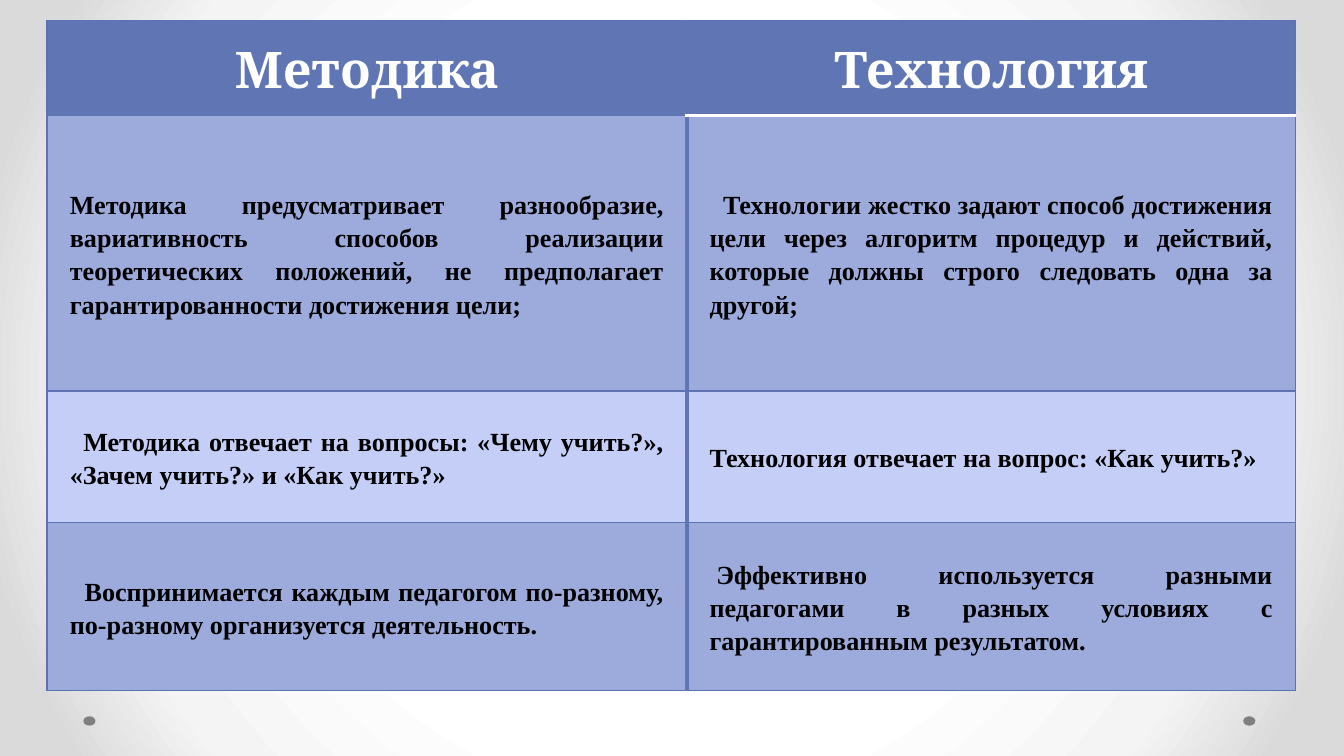
from lxml import etree
from pptx import Presentation
from pptx.dml.color import RGBColor
from pptx.enum.shapes import MSO_SHAPE
from pptx.enum.text import MSO_ANCHOR, PP_ALIGN
from pptx.oxml import parse_xml
from pptx.oxml.ns import nsdecls, qn
from pptx.util import Inches, Pt

OVAL = MSO_SHAPE.OVAL
MIDDLE = MSO_ANCHOR.MIDDLE
CENTER, JUSTIFY = PP_ALIGN.CENTER, PP_ALIGN.JUSTIFY

COLORS = {
    "header": "6076B4", "band": "9DAADC", "light": "C5CEF6",
    "border": "5C72B2", "white": "FFFFFF", "black": "000000", "dot": "808080",
}
BACKDROP_STOPS = [(50, "FFFFFF"), (76, "F4F4F4"), (92, "DADADA")]
SLIDE_WIDTH = 10
SLIDE_HEIGHT = SLIDE_WIDTH * 9 / 16
COLUMN_WIDTHS = [4.76, 4.53]
ROW_HEIGHTS = [0.71, 2.05, 0.98, 1.25]
ROW_FILLS = ["header", "band", "light", "band"]
HEADER_FONT = {"name": "Cambria", "size": Pt(27), "bold": True}
BODY_FONT = {"name": "Times New Roman", "size": Pt(14), "bold": True}
CELL_FORMAT = {
    "vertical_anchor": MIDDLE,
    "margin_left": Inches(0.17), "margin_right": Inches(0.17),
    "margin_top": Inches(0.09), "margin_bottom": Inches(0.09),
}

# Each entry is the wording and its first-line indent in inches.
COMPARISON = [
    [("Методика", 0), ("Технология", 0)],
    [("Методика предусматривает разнообразие, вариативность способов реализации "
      "теоретических положений, не предполагает гарантированности достижения цели;", 0),
     ("Технологии жестко задают способ достижения цели через алгоритм процедур "
      "и действий, которые должны строго следовать одна за другой;", 0.1)],
    [("Методика отвечает на вопросы: «Чему учить?», «Зачем учить?» и «Как учить?»", 0.1),
     ("Технология отвечает на вопрос: «Как учить?»", 0)],
    [("Воспринимается каждым педагогом по-разному, по-разному организуется "
      "деятельность.", 0.11),
     ("Эффективно используется разными педагогами в разных условиях "
      "с гарантированным результатом.", 0.05)],
]


def rgb(color):
    return RGBColor.from_string(COLORS[color])


def apply_format(target, values):
    for attribute, value in values.items():
        setattr(target, attribute, value)


def set_backdrop(slide):
    """Give the slide a radial gradient spreading from its centre."""
    slide.background.fill.solid()
    properties = slide.element.find(".//" + qn("p:bgPr"))
    stops = "".join(
        f'<a:gs pos="{position * 1000}"><a:srgbClr val="{color}"/></a:gs>'
        for position, color in BACKDROP_STOPS)
    gradient = parse_xml(
        f'<a:gradFill {nsdecls("a")} rotWithShape="1"><a:gsLst>{stops}</a:gsLst>'
        '<a:path path="circle"><a:fillToRect l="50000" t="50000" r="50000" b="50000"/>'
        '</a:path></a:gradFill>')
    properties.replace(properties.find(qn("a:solidFill")), gradient)


def add_dot(slide, left):
    dot = slide.shapes.add_shape(
        OVAL, Inches(left), Inches(5.33), Inches(0.09), Inches(0.07))
    dot.shadow.inherit = False
    dot.fill.solid()
    dot.fill.fore_color.rgb = rgb("dot")
    dot.line.fill.background()


def set_borders(cell, borders):
    """Draw the cell sides, given as a side letter with colour and points."""
    properties = cell._tc.get_or_add_tcPr()
    for position, side in enumerate("LRTB"):
        color, width = borders[side]
        line = etree.Element(qn(f"a:ln{side}"), w=str(Pt(width)))
        fill = etree.SubElement(line, qn("a:solidFill"))
        etree.SubElement(fill, qn("a:srgbClr"), val=COLORS[color])
        properties.insert(position, line)


def borders_at(row, column):
    thin, divider, rule = ("border", 0.75), ("header", 2.25), ("white", 2.25)
    borders = dict.fromkeys("LRTB", thin)
    borders["R" if column == 0 else "L"] = divider
    if row < 2:
        header_edge = thin if column == 0 else rule
        borders["B" if row == 0 else "T"] = header_edge
    return borders


def fill_cell(cell, wording, indent, row, column):
    is_header = row == 0
    apply_format(cell, CELL_FORMAT)
    cell.fill.solid()
    cell.fill.fore_color.rgb = rgb(ROW_FILLS[row])
    set_borders(cell, borders_at(row, column))
    cell.text = wording
    paragraph = cell.text_frame.paragraphs[0]
    apply_format(paragraph, {
        "alignment": CENTER if is_header else JUSTIFY,
        "line_spacing": 1.15, "space_after": Pt(10),
    })
    if indent:
        properties = paragraph._p.get_or_add_pPr()
        properties.set("marL", "0")
        properties.set("indent", str(Inches(indent)))
    font = paragraph.runs[0].font
    apply_format(font, HEADER_FONT if is_header else BODY_FONT)
    font.color.rgb = rgb("white" if is_header else "black")


def add_comparison(slide):
    table = slide.shapes.add_table(
        len(ROW_HEIGHTS), len(COLUMN_WIDTHS), Inches(0.35), Inches(0.15),
        Inches(sum(COLUMN_WIDTHS)), Inches(sum(ROW_HEIGHTS))).table
    for column, width in zip(table.columns, COLUMN_WIDTHS):
        column.width = Inches(width)
    for row, height in zip(table.rows, ROW_HEIGHTS):
        row.height = Inches(height)
    for row, entries in enumerate(COMPARISON):
        for column, (wording, indent) in enumerate(entries):
            fill_cell(table.cell(row, column), wording, indent, row, column)


def main():
    presentation = Presentation()
    presentation.slide_width = Inches(SLIDE_WIDTH)
    presentation.slide_height = Inches(SLIDE_HEIGHT)
    slide = presentation.slides.add_slide(presentation.slide_layouts[6])
    set_backdrop(slide)
    for left in (9.25, 0.62):
        add_dot(slide, left)
    add_comparison(slide)
    presentation.save("out.pptx")


if __name__ == "__main__":
    main()
